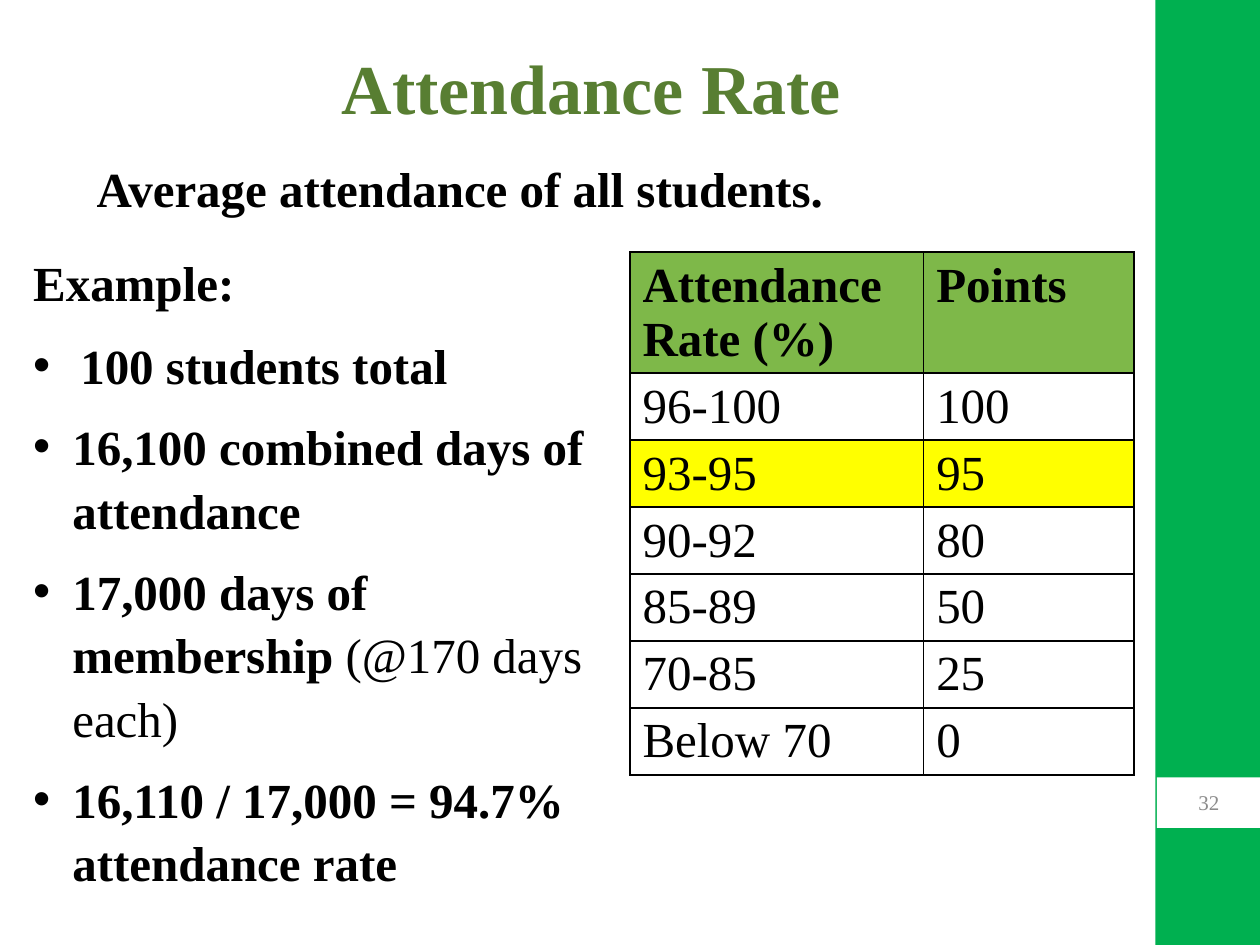
from dataclasses import dataclass

from lxml import etree
from pptx import Presentation
from pptx import util as u
from pptx.dml.color import RGBColor
from pptx.enum import shapes, text
from pptx.oxml import ns

FONT = "Times New Roman"
BLACK, WHITE, GREEN = "000000", "FFFFFF", "00B050"
LINE = 1.08


@dataclass
class Box:
    left: float
    top: float
    width: float
    height: float

    def lengths(self) -> list:
        return [u.Cm(v) for v in (self.left, self.top, self.width, self.height)]


@dataclass
class Item:
    bold: str
    plain: str = ""
    indent: float = 0.79
    before: float = 10


@dataclass
class Row:
    rate: str
    points: str
    fill: str = ""
    bold: bool = False
    height: float = 1.35


ITEMS = [
    Item("Example:", indent=0, before=0),
    Item("100 students total", indent=0.95, before=11),
    Item("16,100 combined days of attendance"),
    Item("17,000 days of membership ", "(@170 days each)"),
    Item("16,110 / 17,000 = 94.7% attendance rate"),
]
ROWS = [
    Row("Attendance Rate (%)", "Points", "7EB849", True, 2.44),
    Row("96-100", "100"),
    Row("93-95", "95", "FFFF00"),
    Row("90-92", "80"),
    Row("85-89", "50"),
    Row("70-85", "25"),
    Row("Below 70", "0"),
]


def color(code: str) -> RGBColor:
    return RGBColor.from_string(code)


def style(run, size: float = 28, code: str = BLACK, bold: bool = True) -> None:
    font = run.font
    font.name, font.size, font.bold = FONT, u.Pt(size), bold
    font.color.rgb = color(code)


def block(slide, box: Box, code: str):
    shape = slide.shapes.add_shape(shapes.MSO_SHAPE.RECTANGLE, *box.lengths())
    shape.shadow.inherit = False
    shape.fill.solid()
    shape.fill.fore_color.rgb = color(code)
    shape.line.fill.background()
    return shape


def title(slide, box: Box, words: str) -> None:
    shape = slide.shapes.title
    shape.left, shape.top, shape.width, shape.height = box.lengths()
    frame = shape.text_frame
    frame.text = words
    frame.vertical_anchor = text.MSO_ANCHOR.TOP
    para = frame.paragraphs[0]
    para.alignment = text.PP_ALIGN.CENTER
    para.line_spacing = LINE
    style(para.runs[0], 40, "587E32")


def bullet(para, indent: float) -> None:
    props = para._p.get_or_add_pPr()
    props.set("marL", str(u.Cm(indent)))
    props.set("indent", str(-u.Cm(indent)))
    etree.SubElement(props, ns.qn("a:buFont")).set("typeface", "Arial")
    etree.SubElement(props, ns.qn("a:buChar")).set("char", "•")


def prose(slide, box: Box, items: list[Item]) -> None:
    frame = slide.shapes.add_textbox(*box.lengths()).text_frame
    frame.word_wrap = True
    for i, item in enumerate(items):
        para = frame.add_paragraph() if i else frame.paragraphs[0]
        if item.indent:
            bullet(para, item.indent)
        para.line_spacing = LINE
        para.space_before = u.Pt(item.before)
        para.text = item.bold
        style(para.runs[0])
        if item.plain:
            run = para.add_run()
            run.text = item.plain
            style(run, bold=False)


def border(cell) -> None:
    props = cell._tc.get_or_add_tcPr()
    for side in ("lnL", "lnR", "lnT", "lnB"):
        line = etree.SubElement(props, ns.qn(f"a:{side}"), w=str(u.Pt(1)))
        fill = etree.SubElement(line, ns.qn("a:solidFill"))
        etree.SubElement(fill, ns.qn("a:srgbClr"), val=BLACK)


def grid(slide, box: Box, widths: list[float], rows: list[Row]) -> None:
    table = slide.shapes.add_table(len(rows), len(widths), *box.lengths()).table
    table.first_row = table.horz_banding = False
    for col, width in zip(table.columns, widths):
        col.width = u.Cm(width)
    for i, row in enumerate(rows):
        table.rows[i].height = u.Cm(row.height)
        for j, words in enumerate((row.rate, row.points)):
            cell = table.cell(i, j)
            border(cell)
            if row.fill:
                cell.fill.solid()
                cell.fill.fore_color.rgb = color(row.fill)
            else:
                cell.fill.background()
            cell.text_frame.text = words
            style(cell.text_frame.paragraphs[0].runs[0], bold=row.bold)


def main() -> None:
    deck = Presentation()
    deck.slide_width, deck.slide_height = u.Cm(25.4), u.Cm(19.05)
    slide = deck.slides.add_slide(deck.slide_layouts[5])
    block(slide, Box(23.29, 0, 2.11, 19.05), GREEN)
    badge = block(slide, Box(23.32, 15.67, 2.1, 1.02), WHITE).text_frame
    badge.text = "32"
    badge.vertical_anchor = text.MSO_ANCHOR.MIDDLE
    badge.paragraphs[0].alignment = text.PP_ALIGN.CENTER
    style(badge.paragraphs[0].runs[0], 12, "8C8C8C", False)
    title(slide, Box(0.84, 0.64, 22.17, 2.34), "Attendance Rate")
    high = sum(row.height for row in ROWS)
    grid(slide, Box(12.7, 5.08, 10.16, high), [5.92, 4.24], ROWS)
    lead = Item("Average attendance of all students.", indent=0, before=0)
    prose(slide, Box(1.7, 2.97, 19.25, 1.45), [lead])
    prose(slide, Box(0.42, 4.88, 11.63, 12.45), ITEMS)
    deck.save("out.pptx")


if __name__ == "__main__":
    main()
